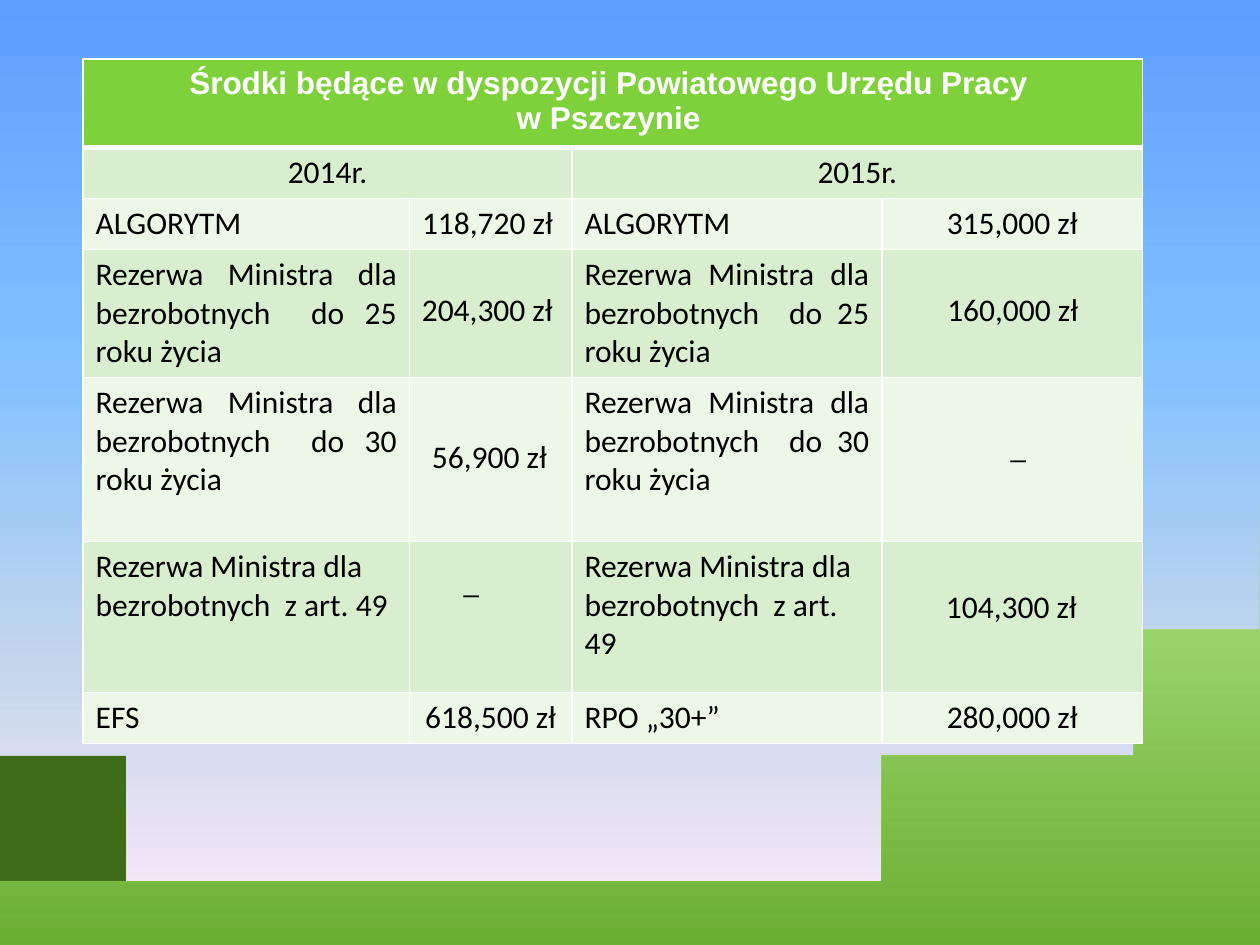
"""Build the slide with the employment office's funds for 2014 and 2015."""
from lxml.etree import SubElement
from pptx import Presentation
from pptx.dml.color import RGBColor
from pptx.enum.text import PP_ALIGN as Align
from pptx.oxml.ns import qn
from pptx.util import Inches, Pt

TITLE = "Środki będące w dyspozycji Powiatowego Urzędu Pracy \vw Pszczynie "
UNDER_25 = "Rezerwa Ministra dla bezrobotnych  do 25 roku życia"
UNDER_30 = "Rezerwa Ministra dla bezrobotnych  do 30 roku życia"
ARTICLE_49 = "Rezerwa Ministra dla bezrobotnych  z art. 49"
ROWS = [
    (TITLE, "", "", ""),
    ("2014r.", "", "2015r.", ""),
    ("ALGORYTM", "118,720 zł", "ALGORYTM", "315,000 zł"),
    (UNDER_25, "", UNDER_25, ""),
    (UNDER_30, "", UNDER_30, ""),
    (ARTICLE_49, "", ARTICLE_49, ""),
    ("EFS", "618,500 zł", "RPO „30+”", "280,000 zł"),
]
L, C, J = Align.LEFT, Align.CENTER, Align.JUSTIFY
ALIGNMENTS = ["CCCC", "CCCC", "LLLC", "JCJC", "JCJC", "LCLC", "LCLC"]
ALIGN_CODES = {"L": L, "C": C, "J": J}
MERGES = [((0, 0), (0, 3)), ((1, 0), (1, 1)), ((1, 2), (1, 3))]
COLUMN_WIDTHS = [2.59, 1.29, 2.46, 2.07]
ROW_HEIGHTS = [0.7, 0.4, 0.4, 1.0, 1.3, 1.2, 0.4]
HEADER_FILL, BAND_FILLS = "7FD13B", ("ECF7E8", "D8EECE")

AMOUNTS = [
    ("_", 3.58, 4.41, 0.33),
    ("_", 7.92, 3.34, 0.33),
    ("160,000 zł", 7.42, 2.25, 1.33),
    ("204,300 zł", 3.25, 2.25, 1.33),
    ("56,900 zł", 3.33, 3.42, 1.33),
    ("104,300 zł", 7.41, 4.61, 1.33),
]

SKY = [(0, "5E9EFF"), (40, "85C2FF"), (70, "C4D6EB"), (100, "FFEBFA")]
MEADOW = [(0, "ADE282"), (100, "61A727")]
FAR_HILL = [
    [(9.71, 5.26), (9.51, 6.03), (9.64, 6.81), (9.81, 7.5)],
    [(0, 7.5)],
    [(0, 6.08), (4.88, 8.1), (7.59, 6.84), (9.71, 5.26)],
]
NEAR_HILL = [
    [(10, 4.25)],
    [(10, 7.5)],
    [(0, 7.5)],
    [(0, 7.03), (5.71, 8.15), (8.24, 6.34), (10, 4.25)],
]


def color(hex_code):
    return RGBColor.from_string(hex_code)


def fill_gradient(fill, owner, stops):
    fill.gradient()
    fill.gradient_angle = 270
    stop_list = next(owner.iter(qn("a:gsLst")))
    for old_stop in list(stop_list):
        stop_list.remove(old_stop)
    for percent, hex_code in stops:
        stop = SubElement(stop_list, qn("a:gs"), pos=str(percent * 1000))
        SubElement(stop, qn("a:srgbClr"), val=hex_code)


def curve_points(controls, steps=40):
    if len(controls) == 1:
        return controls
    points = []
    for step in range(steps + 1):
        t = step / steps
        weights = ((1 - t) ** 3, 3 * t * (1 - t) ** 2, 3 * t * t * (1 - t), t ** 3)
        points.append(tuple(sum(w * p[axis] for w, p in zip(weights, controls))
                            for axis in (0, 1)))
    return points


def add_hill(slide, segments):
    outline = [point for segment in segments for point in curve_points(segment)]
    builder = slide.shapes.build_freeform(*outline[0], scale=Inches(1))
    builder.add_line_segments(outline[1:], close=True)
    hill = builder.convert_to_shape()
    hill.shadow.inherit = False
    hill.line.fill.background()
    return hill


def set_font(paragraph, name="Calibri", hex_code="000000", bold=False):
    font = paragraph.font
    font.name, font.size, font.bold = name, Pt(18), bold
    font.color.rgb = color(hex_code)


def add_borders(cell, row):
    widths = {"L": 1, "R": 1, "T": 3 if row == 1 else 1, "B": 3 if row == 0 else 1}
    properties = cell._tc.get_or_add_tcPr()
    for side, width in widths.items():
        line = SubElement(properties, qn(f"a:ln{side}"), w=str(Pt(width)))
        SubElement(SubElement(line, qn("a:solidFill")), qn("a:srgbClr"), val="FFFFFF")


def add_funds_table(slide):
    table = slide.shapes.add_table(
        len(ROWS), len(COLUMN_WIDTHS), Inches(0.66), Inches(0.47),
        Inches(sum(COLUMN_WIDTHS)), Inches(sum(ROW_HEIGHTS))).table
    for column, width in zip(table.columns, COLUMN_WIDTHS):
        column.width = Inches(width)
    for row, height in zip(table.rows, ROW_HEIGHTS):
        row.height = Inches(height)
    for r, (texts, codes) in enumerate(zip(ROWS, ALIGNMENTS)):
        for c, (text, code) in enumerate(zip(texts, codes)):
            cell = table.cell(r, c)
            add_borders(cell, r)
            cell.fill.solid()
            cell.fill.fore_color.rgb = color(BAND_FILLS[r % 2] if r else HEADER_FILL)
            cell.text_frame.text = text
            paragraph = cell.text_frame.paragraphs[0]
            paragraph.alignment = ALIGN_CODES[code]
            if r == 0:
                set_font(paragraph, "Arial", "FFFFFF", True)
            else:
                set_font(paragraph)
    for first, last in MERGES:
        table.cell(*first).merge(table.cell(*last))


def add_amount(slide, text, left, top, width):
    box = slide.shapes.add_textbox(Inches(left), Inches(top), Inches(width), Inches(0.4))
    box.text_frame.text = text
    set_font(box.text_frame.paragraphs[0])


def main():
    prs = Presentation()
    prs.slide_width, prs.slide_height = Inches(10), Inches(7.5)
    slide = prs.slides.add_slide(prs.slide_layouts[6])
    fill_gradient(slide.background.fill, slide.element, SKY)
    far_hill = add_hill(slide, FAR_HILL)
    far_hill.fill.solid()
    far_hill.fill.fore_color.rgb = color("3F6D19")
    near_hill = add_hill(slide, NEAR_HILL)
    fill_gradient(near_hill.fill, near_hill.element, MEADOW)
    add_funds_table(slide)
    for amount in AMOUNTS:
        add_amount(slide, *amount)
    prs.save("out.pptx")


if __name__ == "__main__":
    main()
